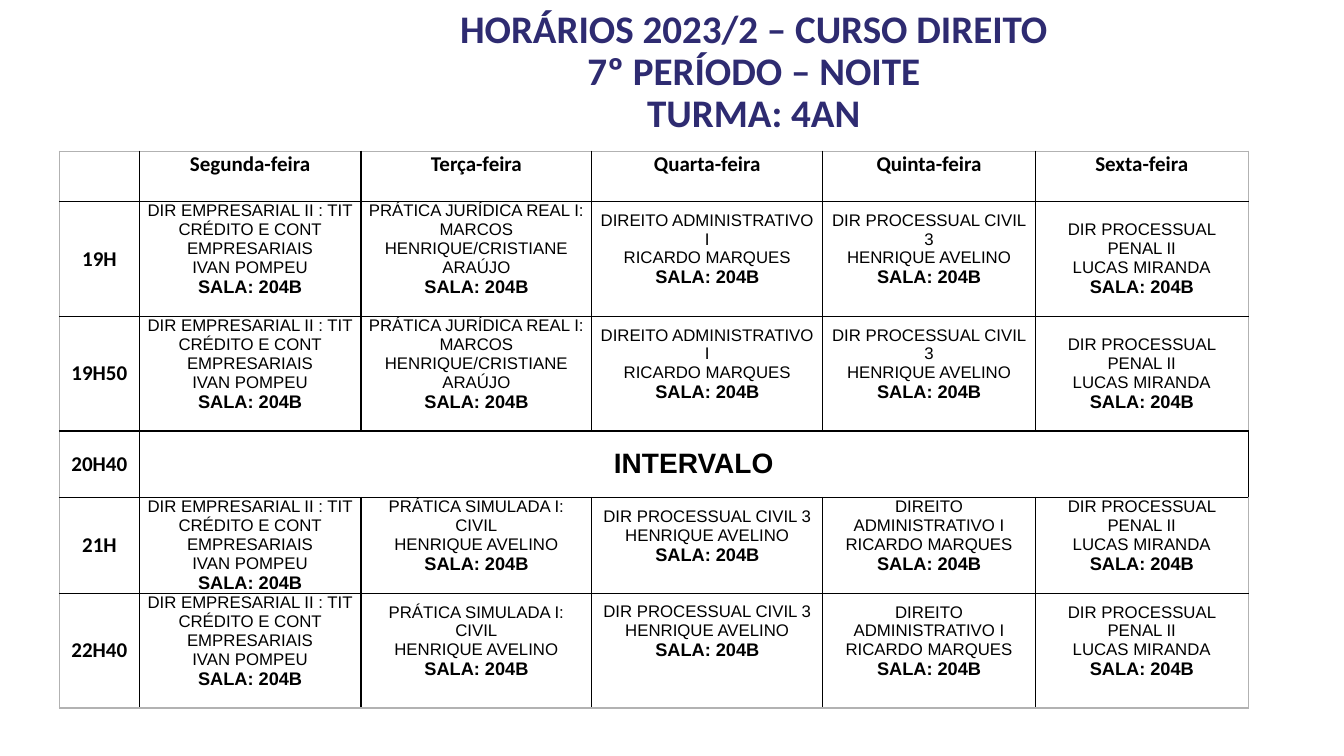
from dataclasses import dataclass

from lxml import etree
from pptx import Presentation
from pptx.dml.color import RGBColor
from pptx.enum.text import MSO_ANCHOR, MSO_AUTO_SIZE, PP_ALIGN
from pptx.oxml.ns import qn
from pptx.util import Emu, Inches, Pt

CENTER = PP_ALIGN.CENTER
TOP = MSO_ANCHOR.TOP
MIDDLE = MSO_ANCHOR.MIDDLE
NO_AUTOFIT = MSO_AUTO_SIZE.NONE

NAVY = RGBColor(0x2E, 0x2B, 0x71)
BLACK = RGBColor(0x00, 0x00, 0x00)
WHITE = RGBColor(0xFF, 0xFF, 0xFF)
GRAY = RGBColor(0xB2, 0xB2, 0xB2)

SLIDE_W = Inches(13.33)
SLIDE_H = Inches(7.5)
COLUMN_SHARES = [5.93, 16.5, 17.18, 17.18, 15.83, 15.83]
ROW_SHARES = [6.67, 15.15, 15.15, 8.8, 12.63, 15.15]
LINE_SHARE = 2.53


@dataclass(frozen=True)
class Style:
    font: str
    size: float
    bold: bool
    color: RGBColor = BLACK


@dataclass(frozen=True)
class Lesson:
    subject: str
    teacher: str
    lines_below: int = 1


@dataclass(frozen=True)
class Period:
    hour: str
    lessons: tuple[Lesson, ...] = ()


TITLE = Style("Calibri", 27.9, True, NAVY)
HEADING = Style("Calibri", 15, True)
BREAK = Style("Arial", 20, True)
BODY = Style("Arial", 12, False)
ROOM = Style("Arial", 13, True)

TITLE_LINES = ["HORÁRIOS 2023/2 – CURSO DIREITO", "7º PERÍODO – NOITE", "TURMA: 4AN"]
DAYS = ["Segunda-feira", "Terça-feira", "Quarta-feira", "Quinta-feira", "Sexta-feira"]
CREDIT = "DIR EMPRESARIAL II : TIT CRÉDITO E CONT EMPRESARIAIS"
EARLY = (
    Lesson(CREDIT, "IVAN POMPEU"),
    Lesson("PRÁTICA JURÍDICA REAL I:", "MARCOS HENRIQUE/CRISTIANE ARAÚJO"),
    Lesson("DIREITO ADMINISTRATIVO I", "RICARDO MARQUES"),
    Lesson("DIR PROCESSUAL CIVIL 3", "HENRIQUE AVELINO"),
    Lesson("DIR PROCESSUAL PENAL II", "LUCAS MIRANDA", 0),
)


def late(credit_below: int, civil_below: int) -> tuple[Lesson, ...]:
    return (
        Lesson(CREDIT, "IVAN POMPEU", credit_below),
        Lesson("PRÁTICA SIMULADA I: CIVIL", "HENRIQUE AVELINO"),
        Lesson("DIR PROCESSUAL CIVIL 3", "HENRIQUE AVELINO", civil_below),
        Lesson("DIREITO ADMINISTRATIVO I", "RICARDO MARQUES"),
        Lesson("DIR PROCESSUAL PENAL II", "LUCAS MIRANDA"),
    )


PERIODS = [
    Period("19H", EARLY),
    Period("19H50", EARLY),
    Period("20H40"),
    Period("21H", late(0, 1)),
    Period("22H40", late(1, 2)),
]


def across(share: float) -> Emu:
    return Emu(round(SLIDE_W * share / 100))


def down(share: float) -> Emu:
    return Emu(round(SLIDE_H * share / 100))


def add_run(p, text: str, style: Style) -> None:
    r = p.add_run()
    r.text = text
    r.font.name = style.font
    r.font.size = Pt(style.size)
    r.font.bold = style.bold
    r.font.color.rgb = style.color


def write_cell(cell, lines: list[tuple[str, Style]], anchor=MIDDLE, lines_below: int = 0) -> None:
    cell.vertical_anchor = anchor
    cell.margin_bottom = down(LINE_SHARE * lines_below)
    tf = cell.text_frame
    for i, (text, style) in enumerate(lines):
        p = tf.add_paragraph() if i else tf.paragraphs[0]
        p.alignment = CENTER
        add_run(p, text, style)


def set_borders(cell, colors: dict[str, RGBColor]) -> None:
    tc_pr = cell._tc.get_or_add_tcPr()
    for i, (side, color) in enumerate(colors.items()):
        ln = etree.Element(qn(f"a:{side}"), w=str(Pt(1)))
        fill = etree.SubElement(ln, qn("a:solidFill"))
        etree.SubElement(fill, qn("a:srgbClr"), val=str(color))
        tc_pr.insert(i, ln)


def add_title(s) -> None:
    sp = s.shapes.title
    sp.left, sp.top = across(24.61), down(2.8)
    sp.width, sp.height = across(62.94), down(19.33)
    tf = sp.text_frame
    tf.word_wrap = True
    tf.auto_size = NO_AUTOFIT
    tf.vertical_anchor = MIDDLE
    tf.margin_bottom = down(6.27)
    p = tf.paragraphs[0]
    p.alignment = CENTER
    p.line_spacing = 0.9
    for i, line in enumerate(TITLE_LINES):
        if i:
            p.add_line_break()
        add_run(p, line, TITLE)


def add_timetable(s) -> None:
    rows, cols = len(ROW_SHARES), len(COLUMN_SHARES)
    table = s.shapes.add_table(
        rows, cols, across(4.43), down(20), across(sum(COLUMN_SHARES)), down(sum(ROW_SHARES))
    ).table
    table.first_row = False
    table.horz_banding = False
    for column, share in zip(table.columns, COLUMN_SHARES):
        column.width = across(share)
    for row, share in zip(table.rows, ROW_SHARES):
        row.height = down(share)

    for i in range(rows):
        for j in range(cols):
            cell = table.cell(i, j)
            cell.margin_left = cell.margin_right = Inches(0.05)
            cell.margin_top = cell.margin_bottom = 0
            cell.fill.solid()
            cell.fill.fore_color.rgb = WHITE
            outer = {"lnL": j == 0, "lnR": j == cols - 1, "lnT": i == 0, "lnB": i == rows - 1}
            set_borders(cell, {side: GRAY if edge else BLACK for side, edge in outer.items()})

    for j, day in enumerate(DAYS, 1):
        write_cell(table.cell(0, j), [(day, HEADING)], TOP)
    for i, period in enumerate(PERIODS, 1):
        write_cell(table.cell(i, 0), [(period.hour, HEADING)])
        if not period.lessons:
            table.cell(i, 1).merge(table.cell(i, cols - 1))
            write_cell(table.cell(i, 1), [("INTERVALO", BREAK)])
        for j, lesson in enumerate(period.lessons, 1):
            lines = [(lesson.subject, BODY), (lesson.teacher, BODY), ("SALA: 204B", ROOM)]
            write_cell(table.cell(i, j), lines, lines_below=lesson.lines_below)


def main() -> None:
    prs = Presentation()
    prs.slide_width = SLIDE_W
    prs.slide_height = SLIDE_H
    s = prs.slides.add_slide(prs.slide_layouts[5])
    add_title(s)
    add_timetable(s)
    prs.save("out.pptx")


if __name__ == "__main__":
    main()
